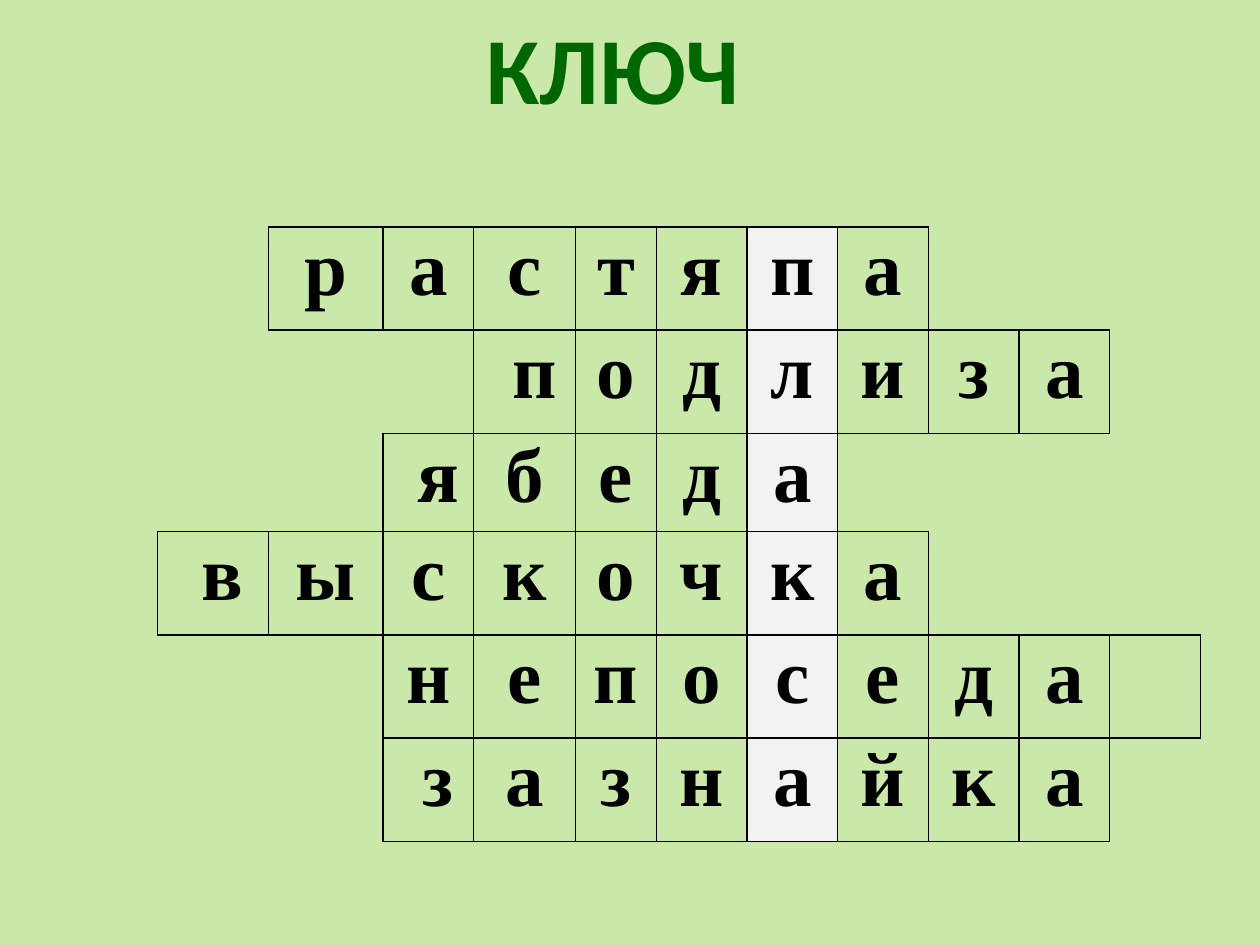
from dataclasses import dataclass

from lxml.etree import SubElement
from pptx import Presentation
from pptx.dml.color import RGBColor
from pptx.enum.text import MSO_AUTO_SIZE, PP_ALIGN
from pptx.oxml import parse_xml
from pptx.oxml.ns import nsdecls, qn
from pptx.util import Inches, Pt

BLACK, GREEN, BACKGROUND, KEY_FILL = "000000", "006600", "CAE8A9", "F2F2F2"
TABLE_LEFT, TABLE_TOP = 1.25, 1.8
COLUMN_WIDTHS = [0.88, 0.91, 0.72, 0.81, 0.64] + [0.72] * 6
ROW_HEIGHTS = [0.82, 0.82, 0.78, 0.82, 0.82, 0.82]
KEY_COLUMN = 6
NO_STYLE = "{2D5ABB26-0587-4C30-8999-92F81FD0307C}"


@dataclass(frozen=True)
class Word:
    start: int
    letters: str
    lead: str = ""
    spare_boxes: int = 0

    def covers(self, column: int) -> bool:
        return 0 <= column - self.start < len(self.letters) + self.spare_boxes

    def text_at(self, column: int) -> str:
        index = column - self.start
        if not 0 <= index < len(self.letters):
            return ""
        return (self.lead if index == 0 else "") + self.letters[index]


WORDS = [
    Word(1, "растяпа"),
    Word(3, "подлиза", lead=" "),
    Word(2, "ябеда", lead=" "),
    Word(0, "выскочка", lead=" "),
    Word(2, "непоседа", spare_boxes=1),
    Word(2, "зазнайка", lead=" "),
]


def color(hex_value: str) -> RGBColor:
    return RGBColor.from_string(hex_value)


def is_box(row: int, column: int) -> bool:
    return 0 <= row < len(WORDS) and WORDS[row].covers(column)


def line_xml(tag: str, width: float, hex_value: str | None):
    fill = (f'<a:solidFill><a:srgbClr val="{hex_value}"/></a:solidFill>'
            if hex_value else "<a:noFill/>")
    return parse_xml(f'<a:{tag} {nsdecls("a")} w="{Pt(width)}">{fill}</a:{tag}>')


def set_borders(cell, row: int, column: int) -> None:
    """Draw each edge that touches a crossword box on either side."""
    neighbours = {
        "lnL": (row, column - 1), "lnR": (row, column + 1),
        "lnT": (row - 1, column), "lnB": (row + 1, column),
    }
    properties = cell._tc.get_or_add_tcPr()
    for position, (tag, neighbour) in enumerate(neighbours.items()):
        drawn = is_box(row, column) or is_box(*neighbour)
        properties.insert(position, line_xml(tag, 1, BLACK if drawn else None))


def fill_cell(cell, row: int, column: int) -> None:
    cell.margin_left = cell.margin_right = Inches(0.07)
    cell.margin_top = cell.margin_bottom = 0
    if column == KEY_COLUMN:
        cell.fill.solid()
        cell.fill.fore_color.rgb = color(KEY_FILL)
    else:
        cell.fill.background()
    set_borders(cell, row, column)
    text = WORDS[row].text_at(column)
    if text:
        paragraph = cell.text_frame.paragraphs[0]
        paragraph.text = text
        paragraph.alignment = PP_ALIGN.CENTER
        style_font(paragraph.font, "Times New Roman", 44, BLACK)


def style_font(font, name: str, size: float, hex_value: str) -> None:
    font.name, font.size, font.bold = name, Pt(size), True
    font.color.rgb = color(hex_value)


def add_crossword(slide) -> None:
    table = slide.shapes.add_table(
        len(ROW_HEIGHTS), len(COLUMN_WIDTHS), Inches(TABLE_LEFT), Inches(TABLE_TOP),
        Inches(sum(COLUMN_WIDTHS)), Inches(sum(ROW_HEIGHTS))).table
    table.first_row = table.horz_banding = False
    table._tbl.tblPr.find(qn("a:tableStyleId")).text = NO_STYLE
    for column, width in zip(table.columns, COLUMN_WIDTHS):
        column.width = Inches(width)
    for row, height in zip(table.rows, ROW_HEIGHTS):
        row.height = Inches(height)
    for row in range(len(ROW_HEIGHTS)):
        for column in range(len(COLUMN_WIDTHS)):
            fill_cell(table.cell(row, column), row, column)


def add_title(slide) -> None:
    frame = slide.shapes.add_textbox(
        Inches(3.75), Inches(0.03), Inches(2.23), Inches(1.01)).text_frame
    frame.word_wrap = False
    frame.auto_size = MSO_AUTO_SIZE.SHAPE_TO_FIT_TEXT
    paragraph = frame.paragraphs[0]
    paragraph.alignment = PP_ALIGN.CENTER
    run = paragraph.add_run()
    run.text = "КЛЮЧ"
    style_font(run.font, "Calibri", 54, GREEN)
    run._r.get_or_add_rPr().insert(0, line_xml("ln", 1.5, "FEFEFE"))


def main() -> None:
    presentation = Presentation()
    presentation.slide_width, presentation.slide_height = Inches(10), Inches(7.5)
    slide = presentation.slides.add_slide(presentation.slide_layouts[6])
    slide.background.fill.solid()
    slide.background.fill.fore_color.rgb = color(BACKGROUND)
    add_crossword(slide)
    add_title(slide)
    presentation.save("out.pptx")


if __name__ == "__main__":
    main()
